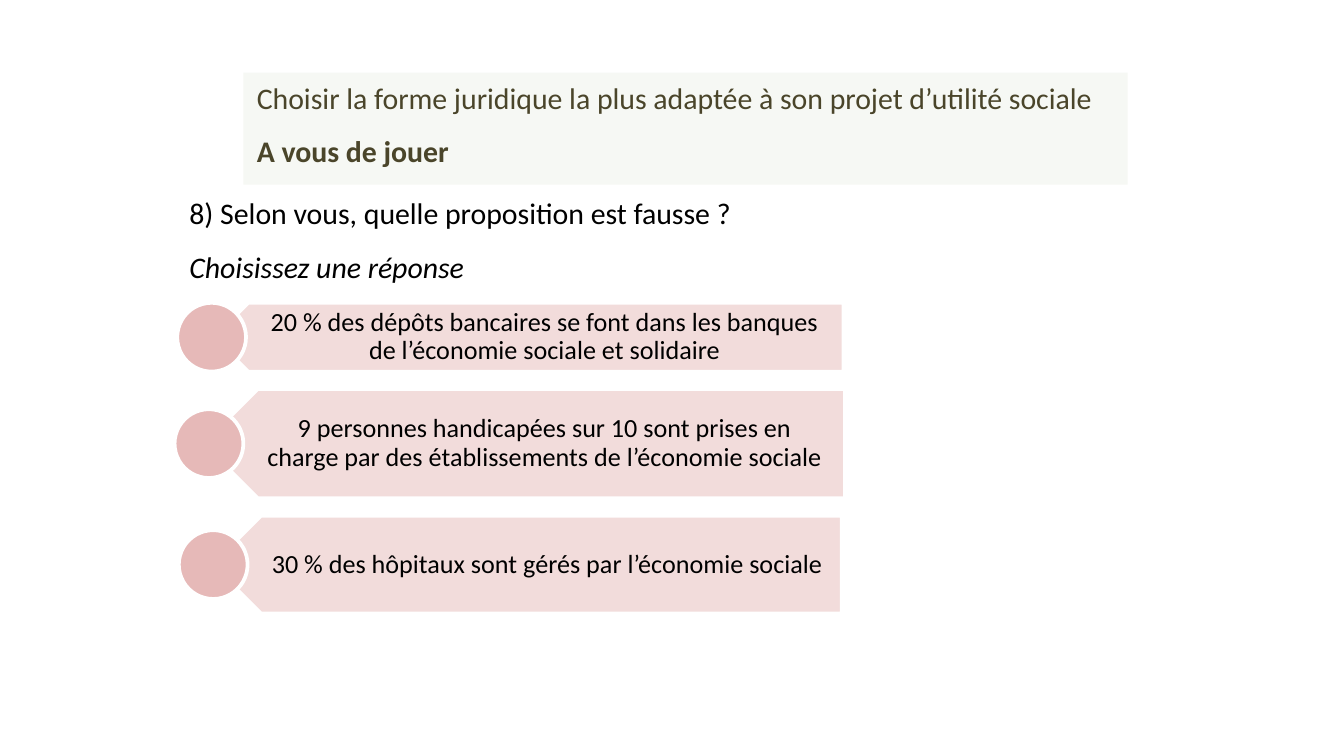
from pptx import Presentation
from pptx.dml.color import RGBColor
from pptx.enum.shapes import MSO_SHAPE as Shape
from pptx.enum.text import MSO_ANCHOR as Anchor, MSO_AUTO_SIZE as AutoSize, PP_ALIGN as Align
from pptx.util import Cm, Pt

BLACK = RGBColor(0x00, 0x00, 0x00)
WHITE = RGBColor(0xFF, 0xFF, 0xFF)
OLIVE = RGBColor(0x4A, 0x45, 0x2A)
PALE_GREEN = RGBColor(0xF6, 0xF8, 0xF4)
PALE_PINK = RGBColor(0xF2, 0xDC, 0xDB)
PINK = RGBColor(0xE6, 0xB9, 0xB8)
FONT = "Calibri"

# Each line: text, bold, italic, line spacing
HEADING = [
    ("Choisir la forme juridique la plus adaptée à son projet d’utilité sociale", False, False, 1.0),
    ("A vous de jouer", True, False, 1.5),
]
QUESTION = [
    ("8) Selon vous, quelle proposition est fausse ?", False, False, 1.0),
    ("Choisissez une réponse", False, True, 1.5),
]
# Each answer: text, circle left, plate left, text left, right edge, height (cm)
ANSWERS = [
    ("20 % des dépôts bancaires se font dans les banques de l’économie sociale et solidaire",
     3.35, 4.04, 4.37, 15.94, 1.3),
    ("9 personnes handicapées sur 10 sont prises en charge par des établissements de l’économie sociale",
     3.3, 3.84, 4.34, 15.97, 2.06),
    ("30 % des hôpitaux sont gérés par l’économie sociale",
     3.38, 4.01, 4.5, 15.91, 1.85),
]
ANSWERS_TOP, ANSWER_GAP, CIRCLE = 5.72, 0.33, 1.3


def place(shape, left, top, width, height):
    shape.left, shape.top, shape.width, shape.height = map(Cm, (left, top, width, height))


def write(frame, lines, size, color, align):
    frame.word_wrap = True
    for index, (text, bold, italic, spacing) in enumerate(lines):
        para = frame.paragraphs[0] if index == 0 else frame.add_paragraph()
        para.alignment = align
        para.line_spacing = spacing
        span = para.add_run()
        span.text = text
        font = span.font
        font.name, font.size, font.bold, font.italic = FONT, Pt(size), bold, italic
        font.color.rgb = color


def add_outlined(slide, kind, fill, left, top, width, height):
    shape = slide.shapes.add_shape(kind, Cm(left), Cm(top), Cm(width), Cm(height))
    shape.shadow.inherit = False
    shape.fill.solid()
    shape.fill.fore_color.rgb = fill
    shape.line.color.rgb = WHITE
    shape.line.width = Pt(2)
    return shape


def add_answer(slide, top, text, circle_left, plate_left, text_left, right, height):
    plate = add_outlined(slide, Shape.PENTAGON, PALE_PINK,
                         plate_left, top, right - plate_left, height)
    plate.rotation = 180
    box = slide.shapes.add_textbox(Cm(text_left), Cm(top), Cm(right - text_left), Cm(height))
    frame = box.text_frame
    frame.vertical_anchor = Anchor.MIDDLE
    frame.margin_left, frame.margin_right = Cm(0.56), Cm(0.28)
    frame.margin_top = frame.margin_bottom = Cm(0.15)
    write(frame, [(text, False, False, 0.9)], 14, BLACK, Align.CENTER)
    add_outlined(slide, Shape.OVAL, PINK,
                 circle_left, top + (height - CIRCLE) / 2, CIRCLE, CIRCLE)


def main():
    deck = Presentation()
    deck.slide_width, deck.slide_height = Cm(25.4), Cm(14.28)
    slide = deck.slides.add_slide(deck.slide_layouts[5])

    title = slide.shapes.title
    place(title, 4.6, 1.37, 16.71, 1.96)
    title.fill.solid()
    title.fill.fore_color.rgb = PALE_GREEN
    question = slide.shapes.add_textbox(Cm(3.33), Cm(3.56), Cm(18.92), Cm(1.96))
    for shape, lines, color in ((title, HEADING, OLIVE), (question, QUESTION, BLACK)):
        frame = shape.text_frame
        frame.vertical_anchor = Anchor.TOP
        frame.auto_size = AutoSize.SHAPE_TO_FIT_TEXT
        write(frame, lines, 16, color, Align.LEFT)

    top = ANSWERS_TOP
    for answer in ANSWERS:
        add_answer(slide, top, *answer)
        top += answer[-1] + ANSWER_GAP

    deck.save("out.pptx")


if __name__ == "__main__":
    main()
